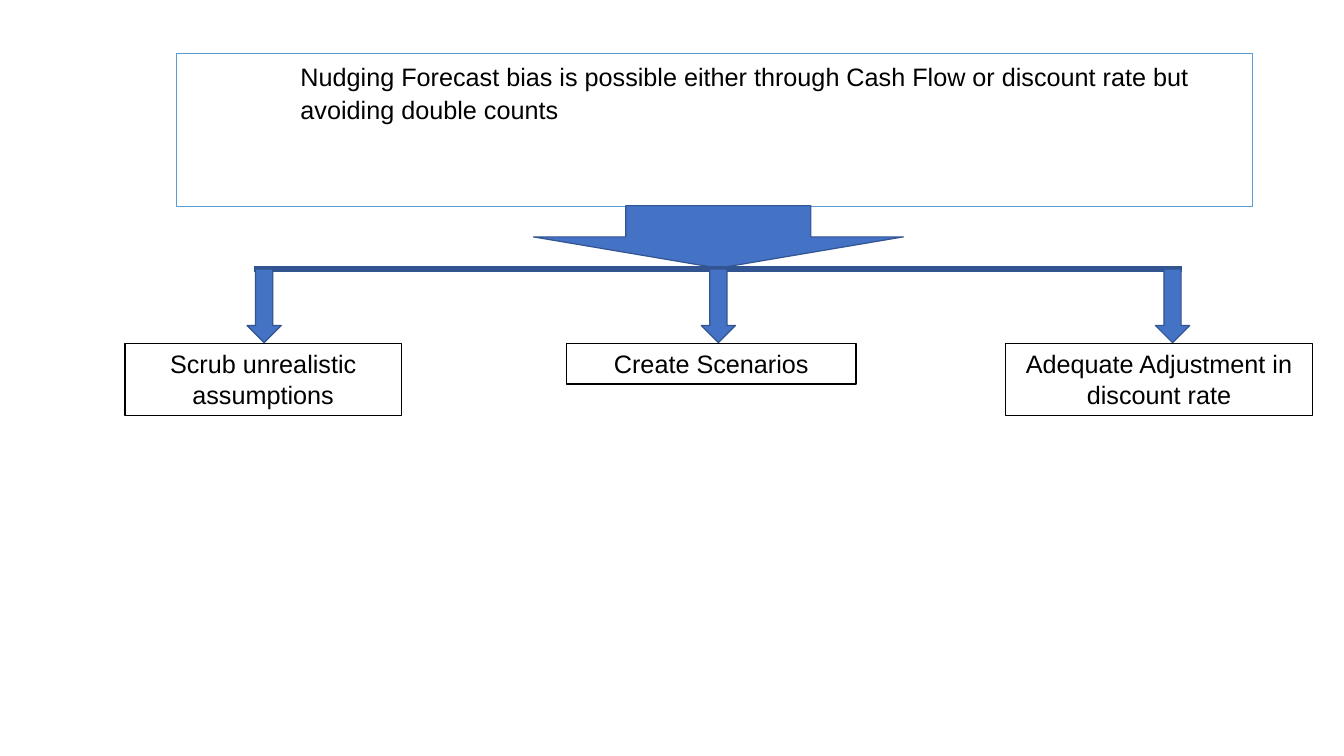
from pptx import Presentation
from pptx.dml.color import RGBColor
from pptx.enum.shapes import MSO_CONNECTOR, MSO_SHAPE
from pptx.enum.text import MSO_ANCHOR, MSO_AUTO_SIZE, PP_ALIGN
from pptx.oxml.ns import qn
from pptx.util import Inches, Pt
from lxml.etree import SubElement

INK = {"text": "000000", "paper": "FFFFFF", "frame": "5B9BD5",
       "arrow": "4472C4", "edge": "325491"}


def paint(shape, fill, line):
    shape.fill.solid()
    shape.fill.fore_color.rgb = RGBColor.from_string(INK[fill])
    shape.line.color.rgb = RGBColor.from_string(INK[line])
    shape.line.width = Pt(0.85)


def write(shape, text, align, anchor):
    frame = shape.text_frame
    frame.text = text
    frame.word_wrap = True
    frame.auto_size = MSO_AUTO_SIZE.NONE
    frame.vertical_anchor = anchor
    para = frame.paragraphs[0]
    para.alignment = align
    font = para.runs[0].font
    font.name, font.size = "Arial", Pt(18)
    font.color.rgb = RGBColor.from_string(INK["text"])
    return para


prs = Presentation()
prs.slide_width, prs.slide_height = Inches(13.33), Inches(7.5)
slide = prs.slides.add_slide(prs.slide_layouts[1])
shapes = slide.shapes

# Main message in the body placeholder
title = shapes.title.element
title.getparent().remove(title)
body = slide.placeholders[1]
body.left, body.top = Inches(1.75), Inches(0.53)
body.width, body.height = Inches(10.67), Inches(1.52)
paint(body, "paper", "frame")
para = write(body, "Nudging Forecast bias is possible either through Cash Flow "
             "or discount rate but avoiding double counts",
             PP_ALIGN.LEFT, MSO_ANCHOR.TOP)
para.line_spacing, para.space_before = 1.1, Pt(10)
props = para._p.get_or_add_pPr()
props.set("marL", str(Inches(1.13)))
props.set("indent", "0")
SubElement(props, qn("a:buNone"))

# Large arrow down to the branch line
bar_y, box_y = 2.67, 3.41
main = shapes.add_shape(MSO_SHAPE.DOWN_ARROW, Inches(5.29), Inches(2.04),
                        Inches(3.67), Inches(0.62))
main.shadow.inherit = False
paint(main, "arrow", "edge")

bar = shapes.add_connector(MSO_CONNECTOR.STRAIGHT, Inches(2.52), Inches(bar_y),
                           Inches(11.72), Inches(bar_y))
bar.line.color.rgb = RGBColor.from_string(INK["edge"])
bar.line.width = Pt(4.5)
SubElement(bar._element.spPr, qn("a:effectLst"))

# Three branches: text, box left, width, height
branches = [("Scrub unrealistic assumptions", 1.24, 2.74, 0.71),
            ("Create Scenarios", 5.62, 2.87, 0.4),
            ("Adequate Adjustment in discount rate", 9.97, 3.05, 0.71)]
for col, (text, left, width, height) in enumerate(branches):
    arrow = shapes.add_shape(MSO_SHAPE.DOWN_ARROW, Inches(2.45 + col * 4.505),
                             Inches(bar_y), Inches(0.34), Inches(0.73))
    arrow.shadow.inherit = False
    paint(arrow, "arrow", "edge")
    box = shapes.add_shape(MSO_SHAPE.RECTANGLE, Inches(left), Inches(box_y),
                           Inches(width), Inches(height))
    box.shadow.inherit = False
    paint(box, "paper", "text")
    write(box, text, PP_ALIGN.CENTER, MSO_ANCHOR.TOP)

prs.save("out.pptx")
